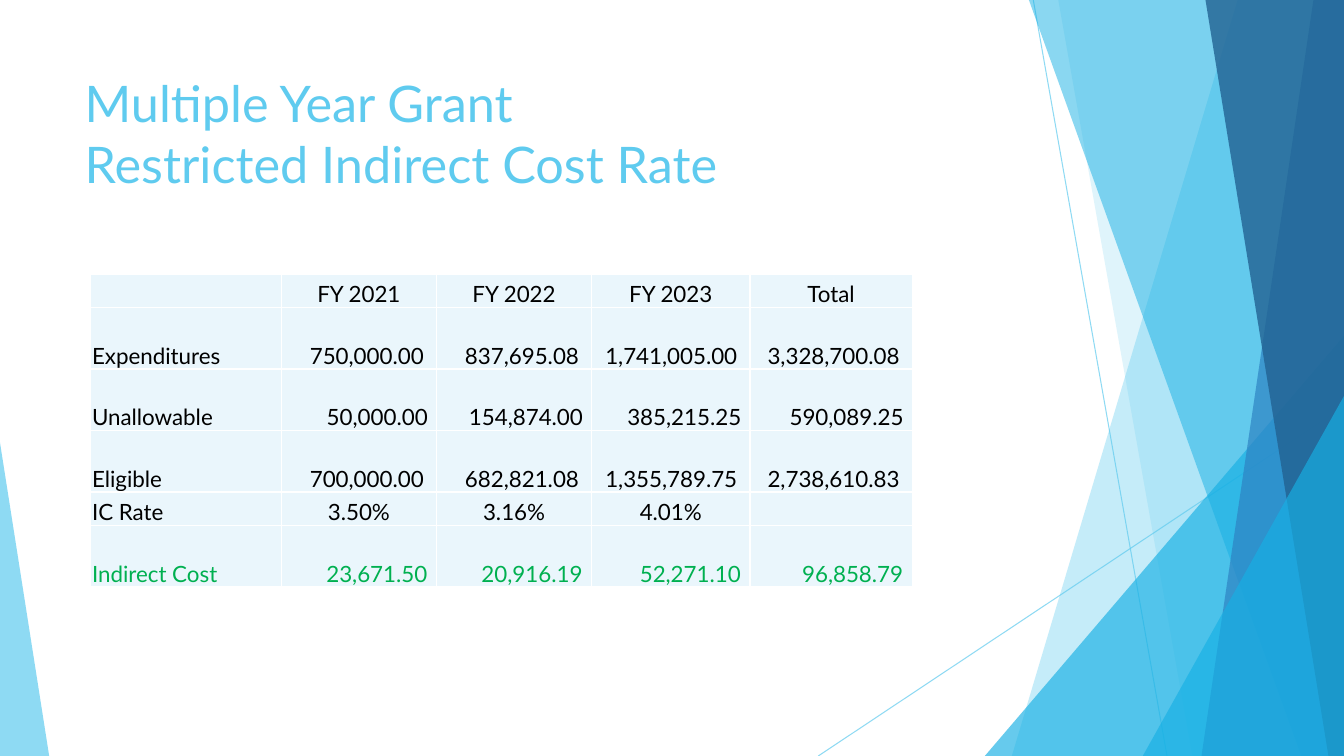
"""Build the slide on restricted indirect cost rates for a multiple year grant."""
from dataclasses import dataclass

from lxml.etree import SubElement
from pptx import Presentation
from pptx.dml.color import RGBColor
from pptx.enum.shapes import MSO_CONNECTOR, MSO_SHAPE
from pptx.enum.text import MSO_ANCHOR, PP_ALIGN
from pptx.oxml.ns import qn
from pptx.shapes.autoshape import Shape
from pptx.slide import Slide
from pptx.table import _Cell as Cell
from pptx.text.text import Font
from pptx.util import Cm, Pt

SKY = RGBColor(0x5F, 0xCB, 0xEF)
CYAN = RGBColor(0x17, 0xB0, 0xE4)
BLUE = RGBColor(0x2E, 0x83, 0xC3)
NAVY = RGBColor(0x22, 0x62, 0x92)
PALE = RGBColor(0xEA, 0xF6, 0xFC)
GREEN = RGBColor(0x00, 0xB0, 0x50)
BLACK = RGBColor(0x00, 0x00, 0x00)

FONT = "Lato"
WIDTH, HEIGHT = 33.87, 19.05


@dataclass(frozen=True)
class Ray:
    """A thin line across the background."""
    x1: float
    y1: float
    x2: float
    y2: float


@dataclass(frozen=True)
class Panel:
    """A slanted band reaching from its left edge to the right of the slide."""
    top_x: float
    bottom_x: float
    color: RGBColor
    opacity: int


@dataclass(frozen=True)
class Wedge:
    """A right triangle standing on the bottom of the slide."""
    left: float
    top: float
    right: float
    apex: float
    color: RGBColor
    opacity: int


@dataclass(frozen=True)
class CostRow:
    """One row of the cost table."""
    label: str
    values: tuple[str, ...]
    height: float = 1.55
    align: PP_ALIGN = PP_ALIGN.RIGHT
    indent: float = 0.03
    color: RGBColor = BLACK


RAYS = (Ray(26.04, 0, 29.41, HEIGHT), Ray(WIDTH, 10.24, 20.62, HEIGHT))
FACETS = (
    Panel(31.19, 25.5, SKY, 36),
    Panel(26.67, 30.05, SKY, 20),
    Wedge(24.82, 8.46, WIDTH, 1, CYAN, 66),
    Panel(25.93, 32.79, CYAN, 50),
    Panel(33.1, 30.28, BLUE, 70),
    Panel(30.38, 33.48, NAVY, 80),
    Wedge(28.8, 9.98, WIDTH, 1, CYAN, 66),
    Wedge(0, 11.15, 1.24, 0, SKY, 70),
)
COLUMN_WIDTHS = (4.8, 3.91, 3.91, 3.99, 4.09)
COST_ROWS = (
    CostRow("", ("FY 2021", "FY 2022", "FY 2023", "Total"), 0.84, PP_ALIGN.CENTER),
    CostRow("Expenditures", ("750,000.00", "837,695.08", "1,741,005.00", "3,328,700.08"), indent=0.32),
    CostRow("Unallowable", ("50,000.00", "154,874.00", "385,215.25", "590,089.25"), indent=0.22),
    CostRow("Eligible", ("700,000.00", "682,821.08", "1,355,789.75", "2,738,610.83"), indent=0.32),
    CostRow("IC Rate", ("3.50%", "3.16%", "4.01%", ""), 0.84, PP_ALIGN.CENTER),
    CostRow("Indirect Cost", ("23,671.50", "20,916.19", "52,271.10", "96,858.79"), indent=0.23, color=GREEN),
)


def style_font(font: Font, size: int, color: RGBColor) -> None:
    """Apply the slide's typeface with a size and colour."""
    font.name = FONT
    font.size = Pt(size)
    font.color.rgb = color


def set_opacity(color_parent, percent: int) -> None:
    """Make the solid colour under an element partly transparent."""
    color = color_parent.find(f".//{qn('a:srgbClr')}")
    SubElement(color, qn("a:alpha"), val=str(percent * 1000))


def draw_ray(slide: Slide, ray: Ray) -> None:
    """Draw one thin background line."""
    line = slide.shapes.add_connector(
        MSO_CONNECTOR.STRAIGHT, Cm(ray.x1), Cm(ray.y1), Cm(ray.x2), Cm(ray.y2))
    line.line.color.rgb = SKY
    line.line.width = Pt(0.75)
    properties = line._element.spPr
    set_opacity(properties.find(qn("a:ln")), 70)
    SubElement(properties, qn("a:effectLst"))


def outline_panel(slide: Slide, panel: Panel) -> Shape:
    """Add the outline of a slanted band."""
    builder = slide.shapes.build_freeform(Cm(panel.top_x), 0)
    corners = ((WIDTH, 0), (WIDTH, HEIGHT), (panel.bottom_x, HEIGHT))
    builder.add_line_segments([(Cm(x), Cm(y)) for x, y in corners])
    return builder.convert_to_shape()


def outline_wedge(slide: Slide, wedge: Wedge) -> Shape:
    """Add the outline of a right triangle."""
    triangle = slide.shapes.add_shape(
        MSO_SHAPE.ISOSCELES_TRIANGLE, Cm(wedge.left), Cm(wedge.top),
        Cm(wedge.right - wedge.left), Cm(HEIGHT - wedge.top))
    triangle.adjustments[0] = wedge.apex
    return triangle


def draw_facet(slide: Slide, facet: Panel | Wedge) -> None:
    """Draw one translucent background facet."""
    outline = outline_panel if isinstance(facet, Panel) else outline_wedge
    shape = outline(slide, facet)
    shape.shadow.inherit = False
    shape.fill.solid()
    shape.fill.fore_color.rgb = facet.color
    shape.line.fill.background()
    set_opacity(shape._element.spPr.find(qn("a:solidFill")), facet.opacity)


def place_title(slide: Slide) -> None:
    """Move, fill and format the title placeholder."""
    title = slide.shapes.title
    title.left, title.top, title.width, title.height = Cm(1.88), Cm(1.7), Cm(24.84), Cm(3.66)
    frame = title.text_frame
    frame.text = "Multiple Year Grant\vRestricted Indirect Cost Rate"
    frame.vertical_anchor = MSO_ANCHOR.TOP
    heading = frame.paragraphs[0]
    heading.alignment = PP_ALIGN.LEFT
    style_font(heading.font, 36, SKY)


def fill_cell(cell: Cell, text: str, align: PP_ALIGN, indent: float, color: RGBColor) -> None:
    """Write and format one table cell."""
    cell.fill.solid()
    cell.fill.fore_color.rgb = PALE
    cell.vertical_anchor = MSO_ANCHOR.BOTTOM
    cell.margin_left = cell.margin_top = Cm(0.03)
    cell.margin_right, cell.margin_bottom = Cm(indent), 0
    cell.text = text
    entry = cell.text_frame.paragraphs[0]
    entry.alignment = align
    style_font(entry.font, 16, color)


def draw_cost_table(slide: Slide) -> None:
    """Draw the table of costs by fiscal year."""
    costs = slide.shapes.add_table(
        len(COST_ROWS), len(COLUMN_WIDTHS), Cm(2.29), Cm(6.91),
        Cm(sum(COLUMN_WIDTHS)), Cm(sum(row.height for row in COST_ROWS))).table
    costs.first_row = costs.horz_banding = False
    for column, width in zip(costs.columns, COLUMN_WIDTHS):
        column.width = Cm(width)
    for index, row in enumerate(COST_ROWS):
        costs.rows[index].height = Cm(row.height)
        fill_cell(costs.cell(index, 0), row.label, PP_ALIGN.LEFT, 0.03, row.color)
        for year, value in enumerate(row.values, 1):
            fill_cell(costs.cell(index, year), value, row.align, row.indent, row.color)


def main() -> None:
    """Build and save the slide."""
    deck = Presentation()
    deck.slide_width, deck.slide_height = Cm(WIDTH), Cm(HEIGHT)
    slide = deck.slides.add_slide(deck.slide_layouts[5])
    for ray in RAYS:
        draw_ray(slide, ray)
    for facet in FACETS:
        draw_facet(slide, facet)
    place_title(slide)
    draw_cost_table(slide)
    deck.save("out.pptx")


if __name__ == "__main__":
    main()
